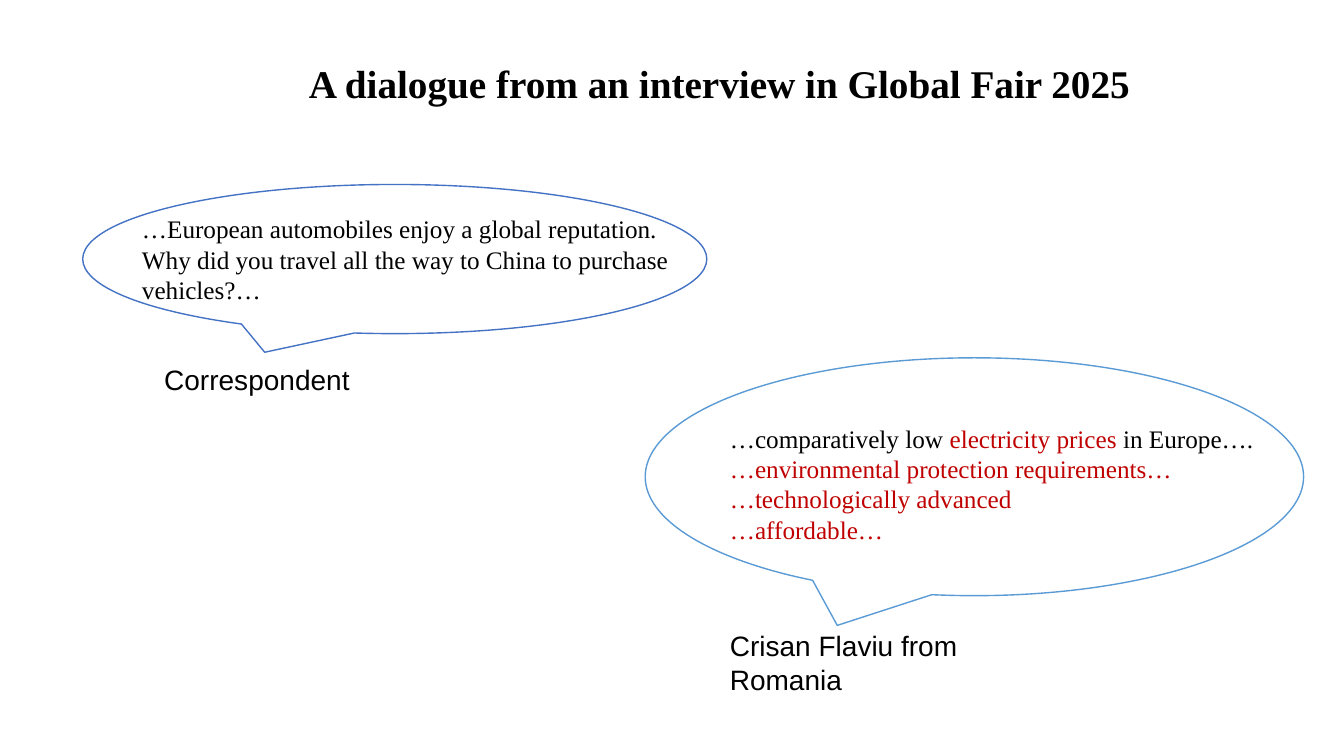
from dataclasses import dataclass

from pptx import Presentation
from pptx.dml.color import RGBColor
from pptx.enum.shapes import MSO_SHAPE
from pptx.enum.text import MSO_ANCHOR, MSO_AUTO_SIZE, PP_ALIGN
from pptx.util import Inches, Pt

CALLOUT = MSO_SHAPE.OVAL_CALLOUT
TOP, NO_FIT = MSO_ANCHOR.TOP, MSO_AUTO_SIZE.NONE
LEFT, CENTER = PP_ALIGN.LEFT, PP_ALIGN.CENTER
TITLE_ONLY = 5


@dataclass(frozen=True)
class Theme:
    ink: RGBColor = RGBColor(0x00, 0x00, 0x00)
    paper: RGBColor = RGBColor(0xFF, 0xFF, 0xFF)
    accent: RGBColor = RGBColor(0xC0, 0x00, 0x00)
    question_line: RGBColor = RGBColor(0x44, 0x72, 0xC4)
    answer_line: RGBColor = RGBColor(0x5B, 0x9B, 0xD5)
    serif: str = "Times New Roman"
    sans: str = "Arial"
    title_size: int = 28
    speech_size: int = 18
    speaker_size: int = 20


THEME = Theme()


def write(holder, paragraphs, size, font=THEME.serif, bold=False, align=LEFT):
    """Fill a shape with paragraphs, each a list of (text, colour) runs."""
    frame = holder.text_frame
    frame.word_wrap = True
    frame.auto_size = NO_FIT
    frame.vertical_anchor = TOP
    for index, runs in enumerate(paragraphs):
        paragraph = frame.add_paragraph() if index else frame.paragraphs[0]
        paragraph.alignment = align
        for text, color in runs:
            run = paragraph.add_run()
            run.text = text
            run.font.name = font
            run.font.size = Pt(size)
            run.font.bold = bold
            run.font.color.rgb = color


presentation = Presentation()
presentation.slide_width = Inches(13.33)
presentation.slide_height = Inches(7.5)
slide = presentation.slides.add_slide(presentation.slide_layouts[TITLE_ONLY])

# Title
title = slide.shapes.title
title.left, title.top = Inches(2.77), Inches(0.54)
title.width, title.height = Inches(8.73), Inches(0.57)
write(title, [[("A dialogue from an interview in Global Fair 2025", THEME.ink)]],
      size=THEME.title_size, bold=True, align=CENTER)

# Speech balloons
balloons = [
    ((0.82, 1.83, 6.19, 1.48), THEME.question_line),
    ((6.4, 3.55, 6.53, 2.36), THEME.answer_line),
]
for box, line_color in balloons:
    balloon = slide.shapes.add_shape(CALLOUT, *map(Inches, box))
    balloon.shadow.inherit = False
    balloon.fill.solid()
    balloon.fill.fore_color.rgb = THEME.paper
    balloon.line.color.rgb = line_color
    balloon.line.width = Pt(1)

# Spoken words
question = [[("…European automobiles enjoy a global reputation. Why did you travel "
              "all the way to China to purchase vehicles?…", THEME.ink)]]
answer = [
    [("…comparatively low ", THEME.ink), ("electricity prices ", THEME.accent),
     ("in Europe….", THEME.ink)],
    [("…environmental protection requirements…", THEME.accent)],
    [("…technologically advanced", THEME.accent)],
    [("…affordable…", THEME.accent)],
]
for box, speech in [((1.31, 2.07, 5.7, 1), question), ((7.14, 4.15, 6.67, 1.31), answer)]:
    write(slide.shapes.add_textbox(*map(Inches, box)), speech, size=THEME.speech_size)

# Speakers
speakers = [
    ((7.14, 6.19, 3.36, 0.77), "Crisan Flaviu from Romania"),
    ((1.53, 3.55, 2.38, 0.44), "Correspondent"),
]
for box, speaker in speakers:
    write(slide.shapes.add_textbox(*map(Inches, box)), [[(speaker, THEME.ink)]],
          size=THEME.speaker_size, font=THEME.sans)

presentation.save("out.pptx")
